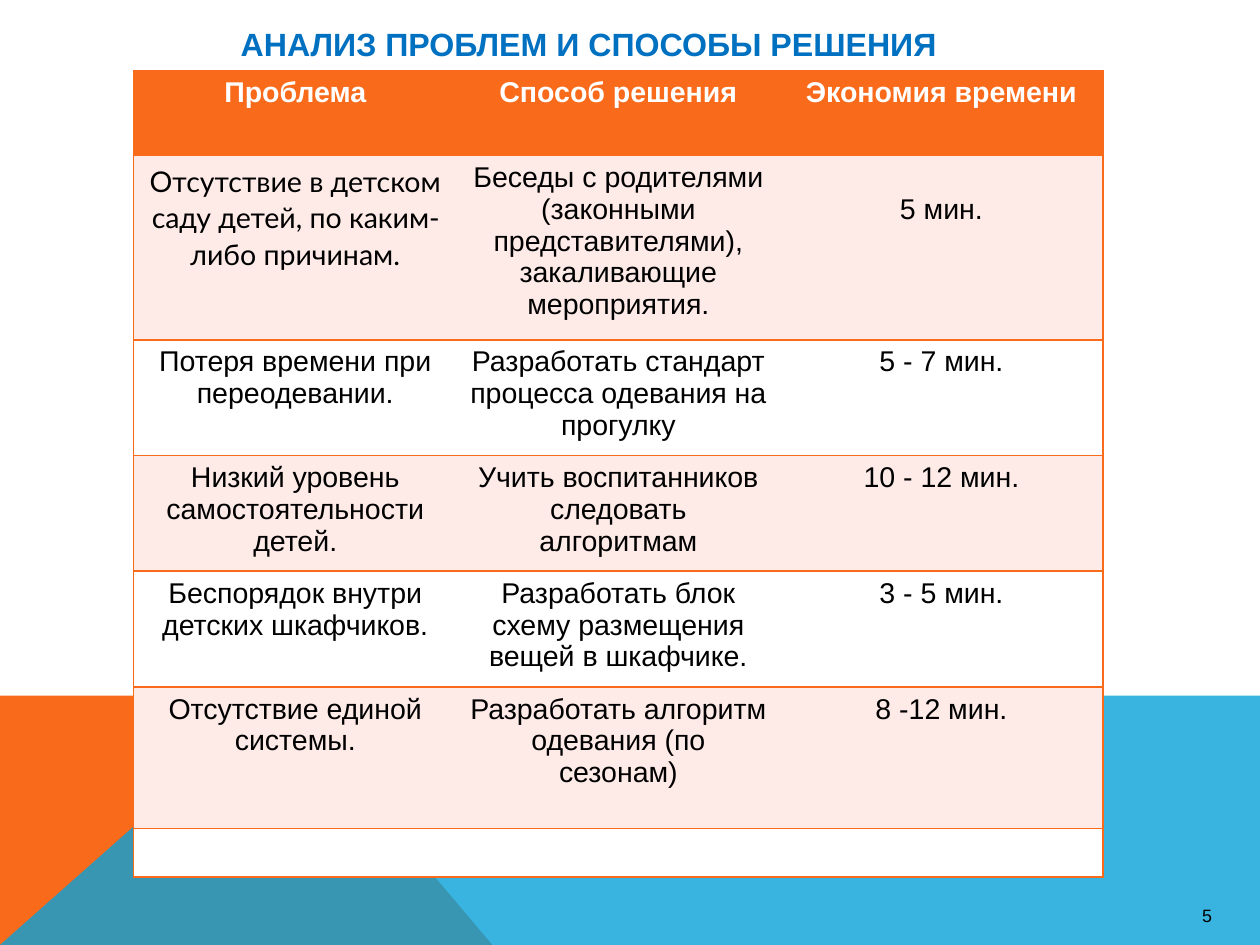
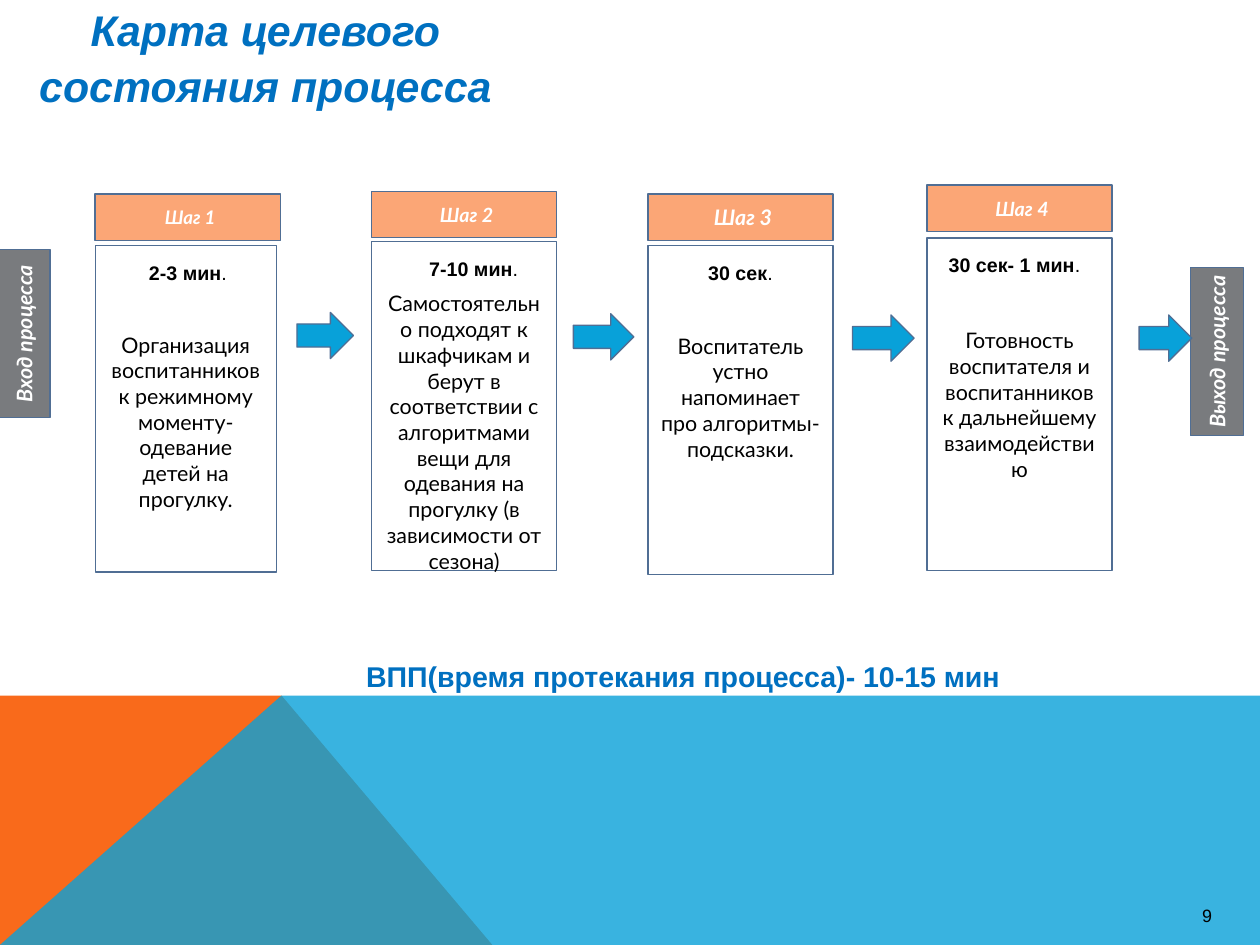
from collections import namedtuple

from lxml import etree
from pptx import Presentation
from pptx import util as u
from pptx.dml.color import RGBColor
from pptx.enum import shapes, text
from pptx.oxml import ns

ORANGE = RGBColor(0xF9, 0x6A, 0x1B)
PEACH = RGBColor(0xFB, 0xA6, 0x76)
ROSE = RGBColor(0xFE, 0xEB, 0xE8)
SKY = RGBColor(0x08, 0xA1, 0xD9)
STEEL = RGBColor(0x50, 0x6E, 0x94)
GRAY = RGBColor(0x79, 0x7B, 0x7E)
TITLE_BLUE = RGBColor(0x00, 0x70, 0xC0)
BLACK = RGBColor(0, 0, 0)
WHITE = RGBColor(255, 255, 255)

# The slide is a grid of 98 columns by 73.5 rows, each a tenth of an inch
COLUMNS, ROWS = 98, 73.5
Box = namedtuple("Box", "left top width height")
Step = namedtuple("Step", "left top name size time time_left task body inset")

PROBLEMS = [
    ("Проблема", "Способ решения", "Экономия времени"),
    ("Отсутствие в детском саду детей, по каким-либо причинам.",
     "Беседы с родителями (законными представителями), закаливающие мероприятия.",
     "5 мин."),
    ("Потеря времени при переодевании.",
     "Разработать стандарт процесса одевания на прогулку", "5 - 7 мин."),
    ("Низкий уровень самостоятельности детей.",
     "Учить воспитанников следовать алгоритмам", "10 - 12 мин."),
    ("Беспорядок внутри детских шкафчиков.",
     "Разработать блок схему размещения вещей в шкафчике.", "3 - 5 мин."),
    ("Отсутствие единой системы.",
     "Разработать алгоритм одевания (по сезонам)", "8 -12 мин."),
    ("", "", ""),
]
ROW_HEIGHTS = [6.6, 12.8, 8.4, 8.4, 8.4, 11, 3.8]

# body: offset from the step's top, width, height; inset: top, bottom
STEPS = [
    Step(7.4, 15.1, "Шаг 1", 10.5, "2-3 мин", 3.2,
         "Организация воспитанников к режимному моменту- одевание детей на прогулку.",
         (4, 14.1, 25.4), (2.5, 0.5)),
    Step(28.9, 14.9, "Шаг 2", 11, "7-10 мин", 3.5,
         "Самостоятельно подходят к шкафчикам и берут в соответствии с "
         "алгоритмами вещи для одевания на прогулку (в зависимости от сезона)",
         (3.9, 14.4, 25.6), (4.5, 0.5)),
    Step(50.4, 15.1, "Шаг 3", 12, "30 сек", 3.7,
         "Воспитатель устно напоминает про алгоритмы- подсказки.",
         (4, 14.4, 25.6), (0.5, 2.5)),
    Step(72.1, 14.4, "Шаг 4", 11, "30 сек- 1 мин", 0.7,
         "Готовность воспитателя и воспитанников к дальнейшему взаимодействию",
         (4.1, 14.4, 25.9), (0.5, 0.5)),
]
ARROWS = [Box(23.1, 24.3, 4.4, 3.6), Box(44.6, 24.4, 4.7, 3.6),
          Box(66.3, 24.5, 4.8, 3.6), Box(88.6, 24.5, 4.1, 3.6)]


def grid(count):
    return u.Inches(count / 10)


def place(box):
    return [grid(side) for side in box]


def write(para, words, font="Arial", size=16, color=BLACK, bold=False,
          italic=False, align=text.PP_ALIGN.CENTER, spacing=None):
    para.alignment = align
    if spacing:
        para.line_spacing = spacing
    span = para.add_run()
    span.text = words
    span.font.name, span.font.size = font, u.Pt(size)
    span.font.color.rgb = color
    span.font.bold, span.font.italic = bold, italic


def set_insets(frame, left, top, right, bottom):
    frame.margin_left, frame.margin_top = grid(left), grid(top)
    frame.margin_right, frame.margin_bottom = grid(right), grid(bottom)


def add_label(page, box, words, wrap=True, insets=(1, 0.5, 1, 0.5), **style):
    frame = page.shapes.add_textbox(*place(box)).text_frame
    frame.word_wrap = wrap
    set_insets(frame, *insets)
    write(frame.paragraphs[0], words, **style)
    return frame.paragraphs[0]


def add_block(page, box, fill, words="", kind=shapes.MSO_SHAPE.RECTANGLE,
              insets=(0.4, 0.4, 0.4, 0.4), upright=False, **style):
    block = page.shapes.add_shape(kind, *place(box))
    block.shadow.inherit = False
    block.fill.solid()
    block.fill.fore_color.rgb = fill
    block.line.color.rgb = STEEL
    block.line.width = u.Pt(0.75)
    if words:
        frame = block.text_frame
        frame.word_wrap = True
        frame.vertical_anchor = text.MSO_ANCHOR.MIDDLE
        set_insets(frame, *insets)
        if upright:
            frame._txBody.bodyPr.set("vert", "vert270")
        write(frame.paragraphs[0], words, **style)


def add_band(page, points, color, opacity=None):
    corners = [(grid(x), grid(y)) for x, y in points]
    builder = page.shapes.build_freeform(*corners[0])
    builder.add_line_segments(corners[1:], close=True)
    band = builder.convert_to_shape()
    band.shadow.inherit = False
    band.line.fill.background()
    band.fill.solid()
    band.fill.fore_color.rgb = color
    if opacity:
        tint = band.fill._xPr.find(".//" + ns.qn("a:srgbClr"))
        etree.SubElement(tint, ns.qn("a:alpha")).set("val", str(opacity * 1000))


def add_page(deck, number):
    """Blank page with the bottom bands and the page number."""
    page = deck.slides.add_slide(deck.slide_layouts[6])
    horizon, peak = 54.1, 21.9
    add_band(page, [(0, ROWS), (0, horizon), (peak, horizon), (38.3, ROWS)], ORANGE)
    add_band(page, [(0, ROWS), (peak, horizon), (COLUMNS, horizon),
                    (COLUMNS, ROWS)], SKY, opacity=80)
    add_label(page, Box(93.5, 70.4, 2.3, 1.7), str(number), wrap=False,
              insets=(0, 0, 0, 0), size=10, align=text.PP_ALIGN.LEFT)
    return page


def set_borders(cell, sides):
    """Orange lines on the named sides (L, R, T, B), none on the others."""
    props = cell._tc.get_or_add_tcPr()
    for index, side in enumerate("LRTB"):
        line = etree.Element(ns.qn("a:ln" + side), w=str(u.Pt(1)))
        if side in sides:
            fill = etree.SubElement(line, ns.qn("a:solidFill"))
            etree.SubElement(fill, ns.qn("a:srgbClr"), val=str(ORANGE))
        else:
            etree.SubElement(line, ns.qn("a:noFill"))
        props.insert(index, line)


def add_problem_table(page, box):
    table = page.shapes.add_table(len(PROBLEMS), 3, *place(box)).table
    for column in table.columns:
        column.width = grid(box.width / 3)
    for row, (height, record) in enumerate(zip(ROW_HEIGHTS, PROBLEMS)):
        table.rows[row].height = grid(height)
        for column, words in enumerate(record):
            cell = table.cell(row, column)
            cell.fill.solid()
            cell.fill.fore_color.rgb = ORANGE if row == 0 else ROSE if row % 2 else WHITE
            set_borders(cell, ("LTB", "TB", "RTB")[column])
            para = cell.text_frame.paragraphs[0]
            if not words:
                cell.margin_top = cell.margin_bottom = 0
            elif row == 0:
                write(para, words, color=WHITE, bold=True)
            elif (row, column) == (1, 0):
                write(para, words, font="Lato", spacing=1.07)
            else:
                write(para, words)
    # The first saving sits one line lower
    table.cell(1, 2).margin_top = grid(3)


def add_step(page, step):
    add_block(page, Box(step.left, step.top, 14.4, 3.6), PEACH, step.name,
              insets=(0.8, 0.4, 0.4, 0.4), font="Lato", size=step.size,
              color=WHITE, bold=True, italic=True)
    offset, width, height = step.body
    top = step.top + offset
    above, below = step.inset
    add_block(page, Box(step.left, top, width, height), WHITE, step.task,
              insets=(1, above, 1, below), font="Lato", size=12)
    para = add_label(page, Box(step.left + step.time_left, top + 0.7, 13.7, 2.9),
                     step.time, wrap=False, size=11, bold=True,
                     align=text.PP_ALIGN.LEFT)
    write(para, ".", size=11, align=text.PP_ALIGN.LEFT)


def add_analysis(deck):
    page = add_page(deck, 5)
    add_label(page, Box(0, 1.4, 91.6, 8.2), "АНАЛИЗ ПРОБЛЕМ И СПОСОБЫ РЕШЕНИЯ",
              size=18, color=TITLE_BLUE, bold=True)
    add_problem_table(page, Box(10.4, 5.5, 75.4, sum(ROW_HEIGHTS)))


def add_process_map(deck):
    page = add_page(deck, 9)
    add_label(page, Box(0, 0, 41.3, 9), "Карта целевого состояния процесса",
              insets=(1, 0, 1, 0), size=24, color=TITLE_BLUE, bold=True,
              italic=True, spacing=1.08)
    # Entry and exit of the process
    for left, top, words in ((-0.2, 19.4, "Вход процесса"),
                             (92.6, 20.8, "Выход процесса")):
        add_block(page, Box(left, top, 4.1, 13.1), GRAY, words, upright=True,
                  font="Lato", size=12, color=WHITE, bold=True, italic=True)
    for step in STEPS:
        add_step(page, step)
    for box in ARROWS:
        add_block(page, box, SKY, kind=shapes.MSO_SHAPE.RIGHT_ARROW)
    # Total duration
    add_label(page, Box(27.5, 50.8, 52, 3.7),
              "ВПП(время протекания процесса)- 10-15 мин", wrap=False,
              color=TITLE_BLUE, bold=True, align=text.PP_ALIGN.LEFT)


def main():
    deck = Presentation()
    deck.slide_width, deck.slide_height = grid(COLUMNS), grid(ROWS)
    add_analysis(deck)
    add_process_map(deck)
    deck.save("out.pptx")


if __name__ == "__main__":
    main()
